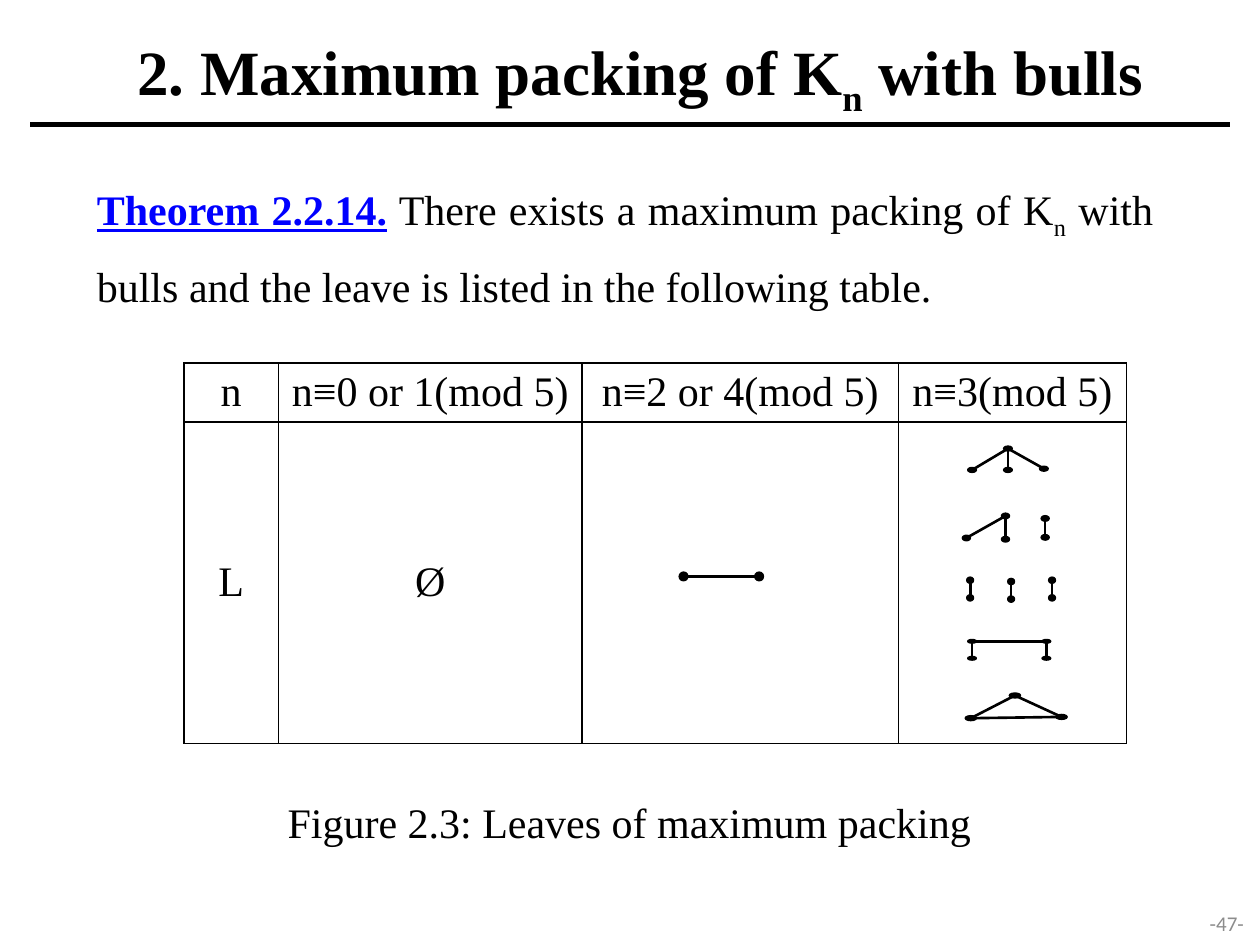
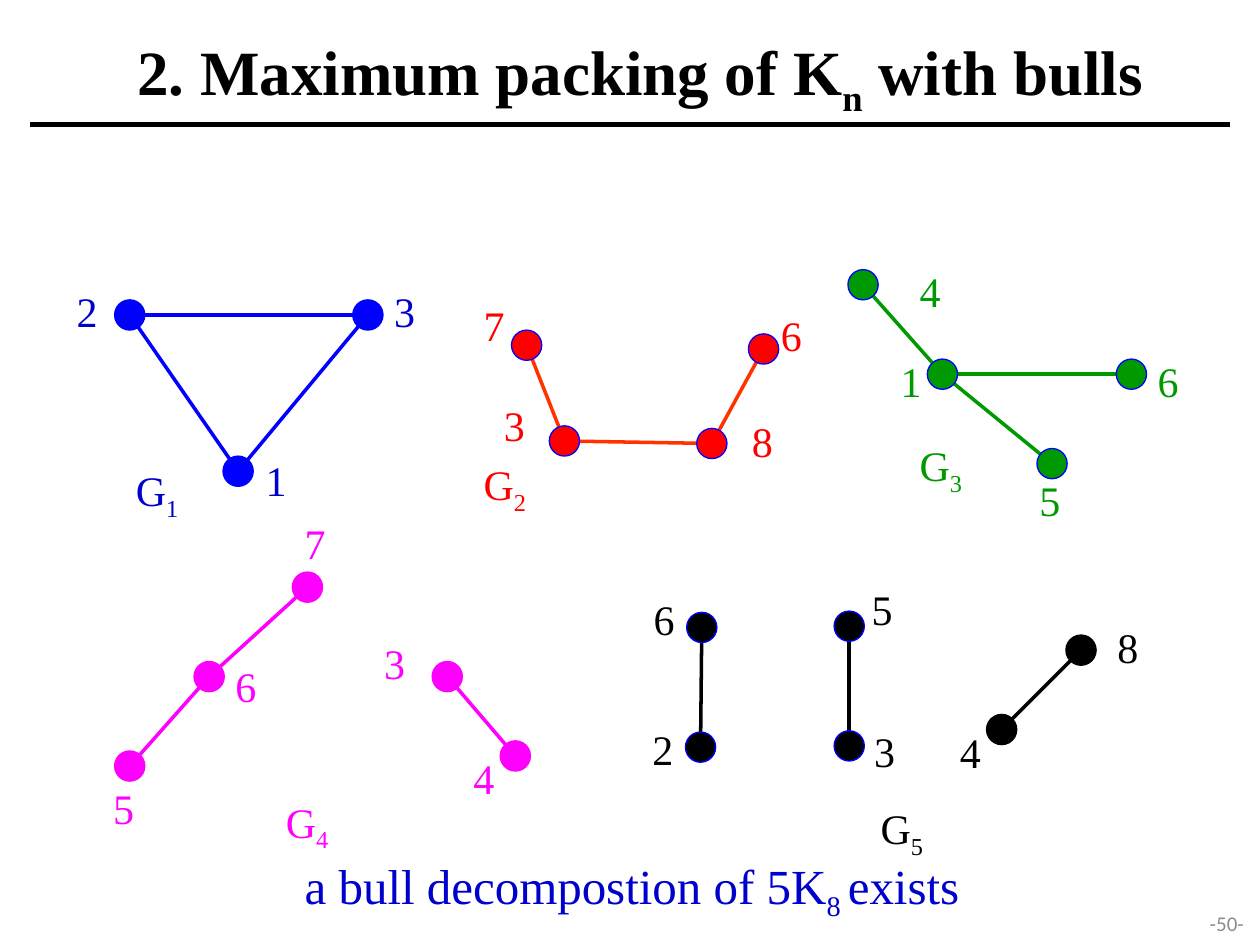
from lxml import etree
from pptx import Presentation
from pptx.dml.color import RGBColor
from pptx.enum.shapes import MSO_CONNECTOR, MSO_SHAPE
from pptx.enum.text import MSO_ANCHOR, PP_ALIGN
from pptx.oxml.ns import qn
from pptx.util import Inches, Pt

LINE = MSO_CONNECTOR.STRAIGHT
OVAL, KNOT = MSO_SHAPE.OVAL, MSO_SHAPE.FLOWCHART_CONNECTOR
LEFT, MID, RIGHT, FULL = PP_ALIGN.LEFT, PP_ALIGN.CENTER, PP_ALIGN.RIGHT, PP_ALIGN.JUSTIFY
TOP, CORE = MSO_ANCHOR.TOP, MSO_ANCHOR.MIDDLE

WIDE, HIGH = Inches(10), Inches(7.5)
COL, ROW = WIDE / 100, HIGH / 75
FONT = "Times New Roman"
HUES = {
    "ink": "000000", "page": "8C8C8C", "blue": "0000FF", "navy": "0000CC",
    "red": "FF0000", "flame": "FF3300", "green": "009900", "pink": "FF00FF",
}

# Each leaf: origin, dot size, dots, edges
LEAVES = [
    ((54, 45), (0.7, 0.7), {"a": (0.25, 0.75), "b": (6.25, 0.75)}, "ab"),
    ((76, 35), (0.7, 0.4), {"a": (4, 0.6), "b": (1.15, 2.3), "c": (6.85, 2.2),
                            "d": (4, 2.3)}, "ab ac ad"),
    ((76, 40), (0.65, 0.45), {"a": (3.8, 0.95), "b": (0.7, 2.7), "c": (3.8, 2.8),
                              "d": (6.95, 1.15), "e": (6.95, 2.65)}, "ab ac de"),
    ((76, 45), (0.55, 0.5), {"a": (1, 1.05), "b": (1, 2.45), "c": (4.25, 1.15),
                             "d": (4.25, 2.55), "e": (7.5, 1.05), "f": (7.5, 2.45)}, "ab cd ef"),
    ((76, 50), (0.7, 0.3), {"a": (1.15, 0.9), "b": (7.05, 0.9), "c": (1.15, 2.25),
                            "d": (7.05, 2.25)}, "ab ac bd"),
    ((76, 55), (0.9, 0.4), {"a": (4.55, 0.2), "b": (1.05, 2), "c": (8.25, 1.9)}, "ab ac bc"),
]

# Each graph: origin, colours (dot, rim, edge, text), dots, label corners, edges, tag
GRAPHS = [
    ((5, 22), ("blue", "blue", "blue", "navy"),
     {"2": (5.3, 3), "3": (24.2, 3), "1": (13.9, 15.4)},
     {"2": (0.1, 0.2), "3": (25.3, 0.2), "1": (15.1, 13.6)},
     "23 31 12", ("G|1|", 4.8, 14.4)),
    ((37, 23), ("red", "blue", "flame", "red"),
     {"7": (4.8, 4.4), "3": (7.8, 12), "8": (19.5, 12.2), "6": (23.6, 4.7)},
     {"7": (0.4, 0.3), "3": (2, 8.2), "8": (21.7, 9.5), "6": (24, 1.1)},
     "73 38 86", ("G|2|", 0.4, 12.9)),
    ((67, 20), ("green", "blue", "green", "green"),
     {"4": (1.5, 2.6), "1": (7.8, 9.7), "6": (22.8, 9.7), "5": (16.5, 16.8)},
     {"4": (5, 0.6), "1": (3.5, 7.7), "6": (23.9, 7.7), "5": (14.5, 17.2)},
     "41 16 15", ("G|3|", 5, 14.4)),
    ((8, 40), ("pink", "pink", "pink", "pink"),
     {"7": (16.4, 6.6), "6": (8.6, 13.7), "5": (2.3, 20.8), "3": (27.5, 13.7), "4": (32.9, 20)},
     {"7": (15.2, 0.6), "6": (9.7, 11.9), "5": (0, 21.6), "3": (21.5, 10.1), "4": (28.6, 19.2)},
     "76 65 34", ("G|4|", 13.7, 22.7)),
    ((50, 45), ("ink", "blue", "ink", "ink"),
     {"6": (5.7, 4.8), "2": (5.6, 14.3), "5": (17.4, 4.7), "3": (17.4, 14.2)},
     {"6": (0.9, 1.6), "2": (0.8, 11.9), "5": (18.2, 0.8), "3": (18.4, 12.1)},
     "62 53", ("G|5|", 18.9, 18.2)),
    ((75, 48), ("ink", "ink", "ink", "ink"),
     {"8": (10.8, 3.6), "4": (4.5, 9.9)},
     {"8": (12.7, 0.8), "4": (0.2, 9.2)},
     "84", None),
]


def hue(name):
    """Return the named colour."""
    return RGBColor.from_string(HUES[name])


def grid(*cells):
    """Turn alternating columns and rows into lengths."""
    return [round(n * (ROW if i % 2 else COL)) for i, n in enumerate(cells)]


def write(para, words, size=24, color="ink", font=FONT, bold=False, under=False):
    """Add runs to a paragraph; parts between bars are subscripts."""
    for i, part in enumerate(words.split("|")):
        if part:
            run = para.add_run()
            run.text = part
            run.font.size, run.font.name = Pt(size), font
            run.font.bold, run.font.underline = bold, under
            run.font.color.rgb = hue(color)
            if i % 2:
                run.font._element.set("baseline", "-25000")


def text(slide, box, words, lead="", align=LEFT, anchor=TOP, wrap=True,
         space=None, before=None, **style):
    """Place a text box, with an optional underlined lead."""
    frame = slide.shapes.add_textbox(*grid(*box)).text_frame
    frame.word_wrap, frame.vertical_anchor = wrap, anchor
    para = frame.paragraphs[0]
    para.alignment, para.line_spacing, para.space_before = align, space, before
    if lead:
        write(para, lead, color="blue", bold=True, under=True)
    write(para, words, **style)


def rule(slide, start, end, color="ink", width=2):
    """Draw a straight line between two grid points."""
    line = slide.shapes.add_connector(LINE, *grid(*start, *end))
    line.line.color.rgb, line.line.width = hue(color), Pt(width)
    etree.SubElement(line._element.spPr, qn("a:effectLst"))


def net(slide, spot, dots, edges, size, kind=OVAL, fill="ink", rim="ink", line="ink", width=2):
    """Draw edges and then dots from an origin."""
    left, top = spot
    spots = {key: (left + x, top + y) for key, (x, y) in dots.items()}
    for start, end in edges.split():
        rule(slide, spots[start], spots[end], line, width)
    wide, high = size
    for x, y in spots.values():
        dot = slide.shapes.add_shape(kind, *grid(x - wide / 2, y - high / 2, wide, high))
        dot.shadow.inherit = False
        dot.fill.solid()
        dot.fill.fore_color.rgb = hue(fill)
        dot.line.color.rgb, dot.line.width = hue(rim), Pt(0.75)


def graph(slide, spot, tones, dots, tags, edges, name):
    """Draw a labelled graph from an origin."""
    fill, rim, line, ink = tones
    net(slide, spot, dots, edges, (2.4, 2.4), fill=fill, rim=rim, line=line)
    left, top = spot
    labels = [(key, *place) for key, place in tags.items()]
    for words, x, y in labels + ([name] if name else []):
        text(slide, (left + x, top + y, 6.3, 5), words, color=ink)


def edge(cell):
    """Give a cell thin black borders on all sides."""
    props = cell._tc.get_or_add_tcPr()
    for i, side in enumerate(("lnL", "lnR", "lnT", "lnB")):
        line = etree.Element(qn(f"a:{side}"), w=str(Pt(1)))
        fill = etree.SubElement(line, qn("a:solidFill"))
        etree.SubElement(fill, qn("a:srgbClr"), val=HUES["ink"])
        props.insert(i, line)


def chart(slide, box, rows, wides, highs):
    """Build the bordered table of leaves."""
    table = slide.shapes.add_table(len(rows), len(wides), *grid(*box)).table
    table.first_row = table.horz_banding = False
    for col, wide in zip(table.columns, wides):
        col.width = round(wide * COL)
    for i, (row, high) in enumerate(zip(rows, highs)):
        table.rows[i].height = round(high * ROW)
        for j, words in enumerate(row):
            cell = table.cell(i, j)
            cell.fill.background()
            cell.vertical_anchor = CORE
            cell.margin_left = cell.margin_right = round(0.7 * COL)
            cell.margin_top = cell.margin_bottom = 0
            para = cell.text_frame.paragraphs[0]
            para.alignment, para.line_spacing = MID, Pt(26)
            write(para, words)
            edge(cell)


def base(deck, page):
    """Add a slide with the shared title, rule and page number."""
    slide = deck.slides.add_slide(deck.slide_layouts[6])
    text(slide, (92.5, 71.3, 7.2, 4), page, align=RIGHT, anchor=CORE,
         size=12, color="page", font="Calibri")
    text(slide, (7.5, 2.1, 86.6, 7.1), "2. Maximum packing of K|n| with bulls",
         align=MID, before=Pt(4), size=36, bold=True)
    rule(slide, (2.4, 9.9), (97.6, 9.9), width=3)
    return slide


def theorem(deck):
    """Build the slide with the theorem and its table."""
    slide = base(deck, "-47-")
    text(slide, (6.7, 13.1, 85.8, 11.6),
         " There exists a maximum packing of K|n| with bulls and the leave "
         "is listed in the following table.",
         lead="Theorem 2.2.14.", align=FULL, space=Pt(40))
    rows = [("n", "n≡0 or 1(mod 5)", "n≡2 or 4(mod 5)", "n≡3(mod 5)"), ("L", "Ø", "", "")]
    chart(slide, (14.6, 28.8, 74.8, 30.3), rows, (7.5, 24.1, 25.1, 18.1), (4.7, 25.5))
    for spot, size, dots, edges in LEAVES:
        net(slide, spot, dots, edges, size, kind=KNOT, width=1.5)
    text(slide, (21.6, 62.7, 56.7, 5), "Figure 2.3: Leaves of maximum packing",
         align=MID, anchor=CORE, wrap=False)


def pieces(deck):
    """Build the slide with the five graphs."""
    slide = base(deck, "-50-")
    for item in GRAPHS:
        graph(slide, *item)
    text(slide, (23.2, 67.4, 57.5, 5.7), "a bull decompostion of 5K|8 |exists",
         size=28, color="navy")


def main():
    """Build and save the deck."""
    deck = Presentation()
    deck.slide_width, deck.slide_height = WIDE, HIGH
    theorem(deck)
    pieces(deck)
    deck.save("out.pptx")


if __name__ == "__main__":
    main()
